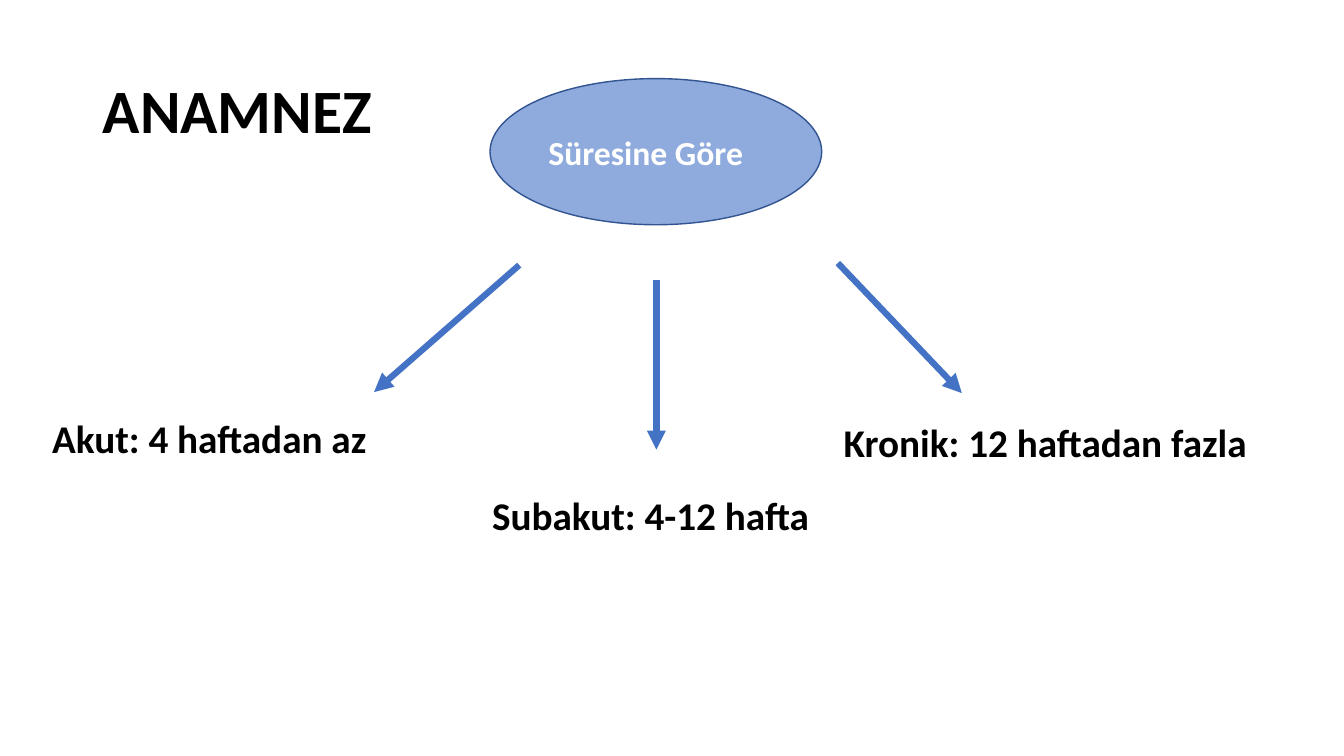
"""Build the ANAMNEZ slide, which sorts complaints by duration."""
from lxml import etree
from pptx import Presentation
from pptx import util as u
from pptx.dml.color import RGBColor
from pptx.enum import shapes, text
from pptx.oxml.ns import qn

THEME = {
    "font": "Calibri",
    "ink": RGBColor.from_string("000000"),
    "light": RGBColor.from_string("FFFFFF"),
    "oval": RGBColor.from_string("8FAADC"),
    "oval_edge": RGBColor.from_string("325491"),
    "arrow": RGBColor.from_string("4472C4"),
    "title_size": u.Pt(44),
    "class_size": u.Pt(28),
    "oval_size": u.Pt(24),
}


def write(frame, wording, size, colour, spacing, anchor):
    """Put one bold, left-aligned line into a text frame."""
    frame.word_wrap = True
    frame.auto_size = text.MSO_AUTO_SIZE.NONE
    frame.vertical_anchor = anchor
    line = frame.paragraphs[0]
    line.alignment = text.PP_ALIGN.LEFT
    line.line_spacing = spacing
    run = line.add_run()
    run.text = wording
    run.font.color.rgb = THEME[colour]
    for name, value in {"name": THEME["font"], "size": THEME[size], "bold": True}.items():
        setattr(run.font, name, value)


deck = Presentation()
deck.slide_width, deck.slide_height = u.Inches(13.33), u.Inches(7.5)
slide = deck.slides.add_slide(deck.slide_layouts[5])

heading = slide.shapes.title
heading_place = {"left": 0.92, "top": 0.4, "width": 11.5, "height": 1.45}
for side, length in heading_place.items():
    setattr(heading, side, u.Inches(length))
write(heading.text_frame, "ANAMNEZ", "title_size", "ink", 0.9, text.MSO_ANCHOR.MIDDLE)

duration = slide.shapes.add_shape(
    shapes.MSO_SHAPE.OVAL, *map(u.Inches, (4.86, 0.78, 3.29, 1.45)))
duration.shadow.inherit = False
duration.fill.solid()
duration.fill.fore_color.rgb = THEME["oval"]
duration.line.color.rgb = THEME["oval_edge"]
duration.line.width = u.Pt(1)
write(duration.text_frame, "Süresine Göre", "oval_size", "light", 1.0, text.MSO_ANCHOR.MIDDLE)

arrow_ends = [
    (8.31, 2.61, 9.54, 3.9),
    (6.51, 2.78, 6.51, 4.46),
    (5.15, 2.63, 3.71, 3.89),
]
for ends in arrow_ends:
    arrow = slide.shapes.add_connector(shapes.MSO_CONNECTOR.STRAIGHT, *map(u.Inches, ends))
    arrow.line.color.rgb = THEME["arrow"]
    arrow.line.width = u.Pt(4.5)
    etree.SubElement(arrow.line._get_or_add_ln(), qn("a:tailEnd"), type="triangle")
    etree.SubElement(arrow._element.spPr, qn("a:effectLst"))

classes = [
    ("Akut: 4 haftadan az", (4.15, 0.65), (0.42, 3.56), (0.1, 0.05), 0.8),
    ("Subakut: 4-12 hafta", (4.57, 0.88), (4.43, 3.98), (0.45, 0.39), 0.8),
    ("Kronik: 12 haftadan fazla", (4.15, 0.89), (8.27, 4.34), (0.1, 0.05), 0.9),
]
for wording, (top, height), (left, width), (indent, drop), spacing in classes:
    label = slide.shapes.add_textbox(*map(u.Inches, (left, top, width, height)))
    label.text_frame.margin_left = u.Inches(indent)
    label.text_frame.margin_top = u.Inches(drop)
    write(label.text_frame, wording, "class_size", "ink", spacing, text.MSO_ANCHOR.TOP)

deck.save("out.pptx")
